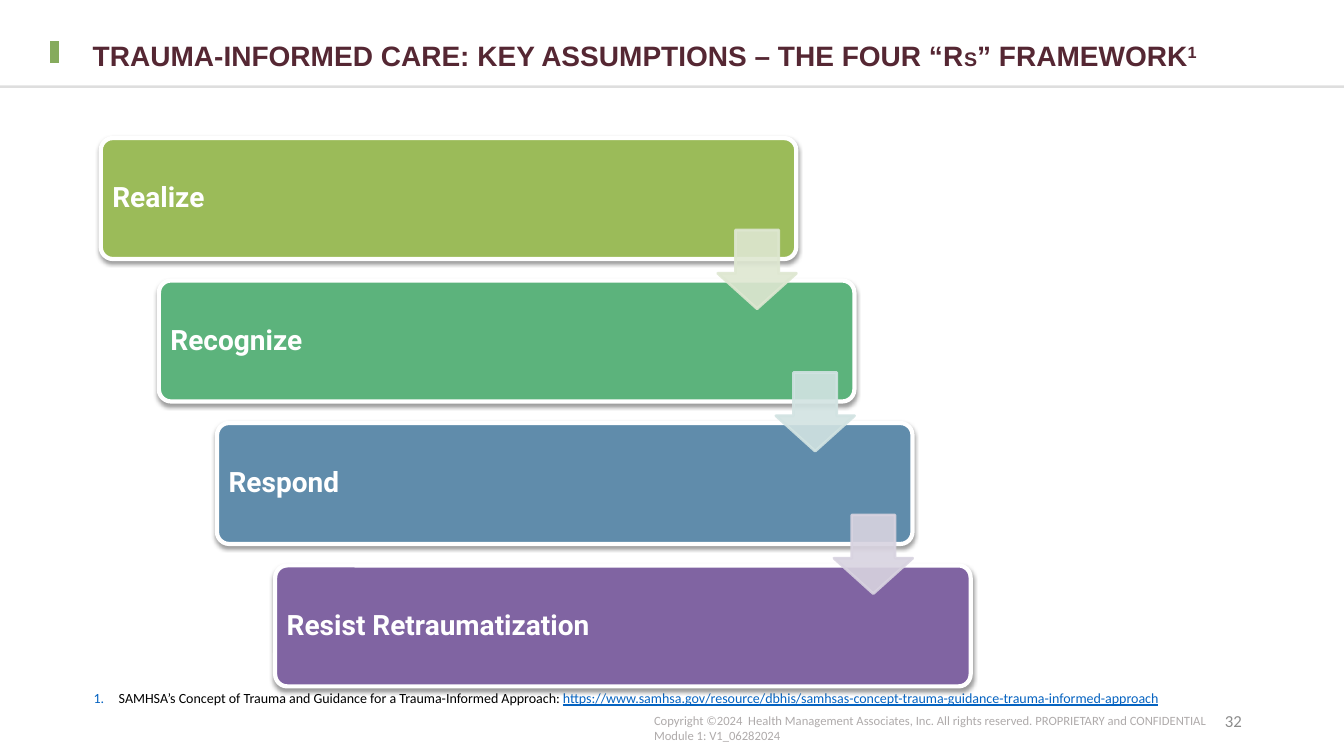
"""Build the slide on the four "Rs" framework of trauma-informed care."""
from dataclasses import dataclass

from lxml import etree
from pptx import Presentation
from pptx import util as u
from pptx.dml.color import RGBColor
from pptx.enum import shapes, text
from pptx.oxml.ns import qn

COLUMNS, ROWS = 160, 90
CELL = u.Inches(1) / 12
STEP_LEFT, STEP_TOP, STEP_WIDTH, STEP_HEIGHT = 12, 16.44, 82.8, 14.4
STEP_SHIFT, STEP_DROP = 6.92, 16.96
ARROW_SHIFT, ARROW_DROP, ARROW_SIZE = 73.45, 10.95, 9.36


@dataclass(frozen=True)
class Theme:
    """Colours, fonts and type sizes of the slide."""
    heading_font: str = "Arial"
    step_font: str = "Roboto"
    small_font: str = "Calibri"
    heading: str = "552733"
    accent: str = "86AB5D"
    black: str = "000000"
    white: str = "FFFFFF"
    link: str = "0563C1"
    footer: str = "AFABAB"
    page: str = "8C8C8C"
    large: int = 20
    small_cap: int = 14
    page_size: int = 12
    note_size: int = 10
    footer_size: int = 9


THEME = Theme()
STEPS = [
    ("Realize", "9BBB59", "DEE7D1"),
    ("Recognize", "5CB37C", "D2E3E2"),
    ("Respond", "608CAB", "D8D3E0"),
    ("Resist Retraumatization", "8064A2", None),
]


def grid(*cells):
    """Turn grid cells into slide lengths."""
    return [u.Emu(round(cell * CELL)) for cell in cells]


def rgb(code):
    """Turn a hex code into a colour."""
    return RGBColor.from_string(code)


def add_element(parent, tag, **attributes):
    """Append a drawing element with its attributes."""
    element = etree.SubElement(parent, qn(tag))
    for key, value in attributes.items():
        element.set(key, str(value))
    return element


def set_opacity(shape, percent):
    """Give the fill and line colours of a shape an opacity."""
    for colour in list(shape._element.spPr.iter(qn("a:srgbClr"))):
        add_element(colour, "a:alpha", val=percent * 1000)


def add_run(paragraph, words, font, size, colour, bold=False, underline=False):
    """Add one formatted run."""
    run = paragraph.add_run()
    run.text = words
    run.font.name, run.font.size = font, u.Pt(size)
    run.font.bold, run.font.underline = bold, underline
    run.font.color.rgb = rgb(colour)
    return run


def add_rule(slide, ends, colour, width, opacity=100):
    """Draw a straight line between two grid points."""
    rule = slide.shapes.add_connector(shapes.MSO_CONNECTOR.STRAIGHT, *grid(*ends))
    rule.line.color.rgb, rule.line.width = rgb(colour), u.Pt(width)
    set_opacity(rule, opacity)
    add_element(rule._element.spPr, "a:effectLst")


def add_panel(slide, kind, cells, fill, line, width, adjustments):
    """Draw a filled and outlined preset shape."""
    panel = slide.shapes.add_shape(kind, *grid(*cells))
    panel.shadow.inherit = False
    panel.fill.solid()
    panel.fill.fore_color.rgb = rgb(fill)
    panel.line.color.rgb, panel.line.width = rgb(line), u.Pt(width)
    for index, value in enumerate(adjustments):
        panel.adjustments[index] = value
    return panel


def add_text_frame(slide, cells, anchor=text.MSO_ANCHOR.TOP):
    """Place a wrapping text box and return its frame."""
    frame = slide.shapes.add_textbox(*grid(*cells)).text_frame
    frame.word_wrap, frame.vertical_anchor = True, anchor
    return frame


def add_step(slide, index, label, fill):
    """Draw one labelled step of the staircase."""
    cells = (STEP_LEFT + index * STEP_SHIFT, STEP_TOP + index * STEP_DROP,
             STEP_WIDTH, STEP_HEIGHT)
    step = add_panel(slide, shapes.MSO_SHAPE.ROUNDED_RECTANGLE, cells,
                     fill, THEME.white, 3, [0.1])
    effects = step._element.spPr.find(qn("a:effectLst"))
    shadow = add_element(effects, "a:outerShdw", blurRad=u.Pt(3.1), dist=u.Pt(1.6),
                         dir=90 * 60000, rotWithShape=0)
    shade = add_element(shadow, "a:srgbClr", val=THEME.black)
    add_element(shade, "a:alpha", val=38000)
    frame = step.text_frame
    frame.word_wrap, frame.vertical_anchor = True, text.MSO_ANCHOR.MIDDLE
    frame.margin_left = frame.margin_right = u.Inches(0.08)
    paragraph = frame.paragraphs[0]
    paragraph.alignment, paragraph.line_spacing = text.PP_ALIGN.LEFT, 0.9
    add_run(paragraph, label, THEME.step_font, THEME.large, THEME.white, bold=True)


def add_arrow(slide, index, colour):
    """Draw the translucent arrow leading to the next step."""
    cells = (STEP_LEFT + ARROW_SHIFT + index * STEP_SHIFT,
             STEP_TOP + ARROW_DROP + index * STEP_DROP, ARROW_SIZE, ARROW_SIZE)
    arrow = add_panel(slide, shapes.MSO_SHAPE.DOWN_ARROW, cells,
                      colour, colour, 2, [0.55, 0.45])
    set_opacity(arrow, 90)


def add_heading(slide):
    """Place and format the title."""
    title = slide.shapes.title
    title.left, title.top, title.width, title.height = grid(11.04, 5.04, 138, 3.6)
    frame = title.text_frame
    frame.margin_left = frame.margin_right = frame.margin_top = frame.margin_bottom = 0
    frame.word_wrap, frame.vertical_anchor = True, text.MSO_ANCHOR.MIDDLE
    paragraph = frame.paragraphs[0]
    paragraph.alignment, paragraph.line_spacing = text.PP_ALIGN.LEFT, 0.9
    for words, size in (("TRAUMA-INFORMED CARE: KEY ASSUMPTIONS – THE FOUR “R", THEME.large),
                        ("S", THEME.small_cap), ("” FRAMEWORK", THEME.large),
                        ("1", THEME.large)):
        run = add_run(paragraph, words, THEME.heading_font, size, THEME.heading, bold=True)
    run._r.get_or_add_rPr().set("baseline", "30000")


def add_reference(slide):
    """Add the numbered source note."""
    frame = add_text_frame(slide, (9.96, 79.92, 138, 4.8), text.MSO_ANCHOR.BOTTOM)
    paragraph = frame.paragraphs[0]
    properties = paragraph._p.get_or_add_pPr()
    properties.set("marL", str(u.Inches(0.25)))
    properties.set("indent", str(-u.Inches(0.25)))
    number_colour = add_element(properties, "a:buClr")
    add_element(number_colour, "a:srgbClr", val=THEME.link)
    add_element(properties, "a:buFont", typeface=THEME.small_font)
    add_element(properties, "a:buAutoNum", type="arabicPeriod")
    paragraph.line_spacing = 0.9
    add_run(paragraph, "SAMHSA’s Concept of Trauma and Guidance for a Trauma-Informed Approach: ",
            THEME.small_font, THEME.note_size, THEME.black)
    add_run(paragraph, "https://www.samhsa.gov/resource/dbhis/"
            "samhsas-concept-trauma-guidance-trauma-informed-approach",
            THEME.small_font, THEME.note_size, THEME.link, underline=True)


def add_footer(slide):
    """Add the copyright lines and the page number."""
    frame = add_text_frame(slide, (76.68, 84.24, 68.88, 4.8))
    copyright_line, module_line = frame.paragraphs[0], frame.add_paragraph()
    for paragraph, words in (
            (copyright_line, "Copyright ©2024  Health Management Associates, Inc. "
             "All rights reserved. PROPRIETARY and CONFIDENTIAL"),
            (module_line, "Module 1: V1_06282024")):
        add_run(paragraph, words, THEME.small_font, THEME.footer_size, THEME.footer)
    page = add_text_frame(slide, (113.04, 83.4, 36, 4.8), text.MSO_ANCHOR.MIDDLE).paragraphs[0]
    page.alignment = text.PP_ALIGN.RIGHT
    add_run(page, "32", THEME.small_font, THEME.page_size, THEME.page)


def main():
    """Build and save the slide."""
    deck = Presentation()
    deck.slide_width, deck.slide_height = grid(COLUMNS, ROWS)
    slide = deck.slides.add_slide(deck.slide_layouts[5])
    add_rule(slide, (0, 10.32, COLUMNS, 10.32), THEME.black, 1.75, opacity=12)
    add_rule(slide, (6.48, 4.92, 6.48, 7.56), THEME.accent, 7)
    add_heading(slide)
    add_reference(slide)
    for index, (label, fill, _) in enumerate(STEPS):
        add_step(slide, index, label, fill)
    for index, (_, _, arrow_colour) in enumerate(STEPS[:-1]):
        add_arrow(slide, index, arrow_colour)
    add_footer(slide)
    deck.save("out.pptx")


if __name__ == "__main__":
    main()
